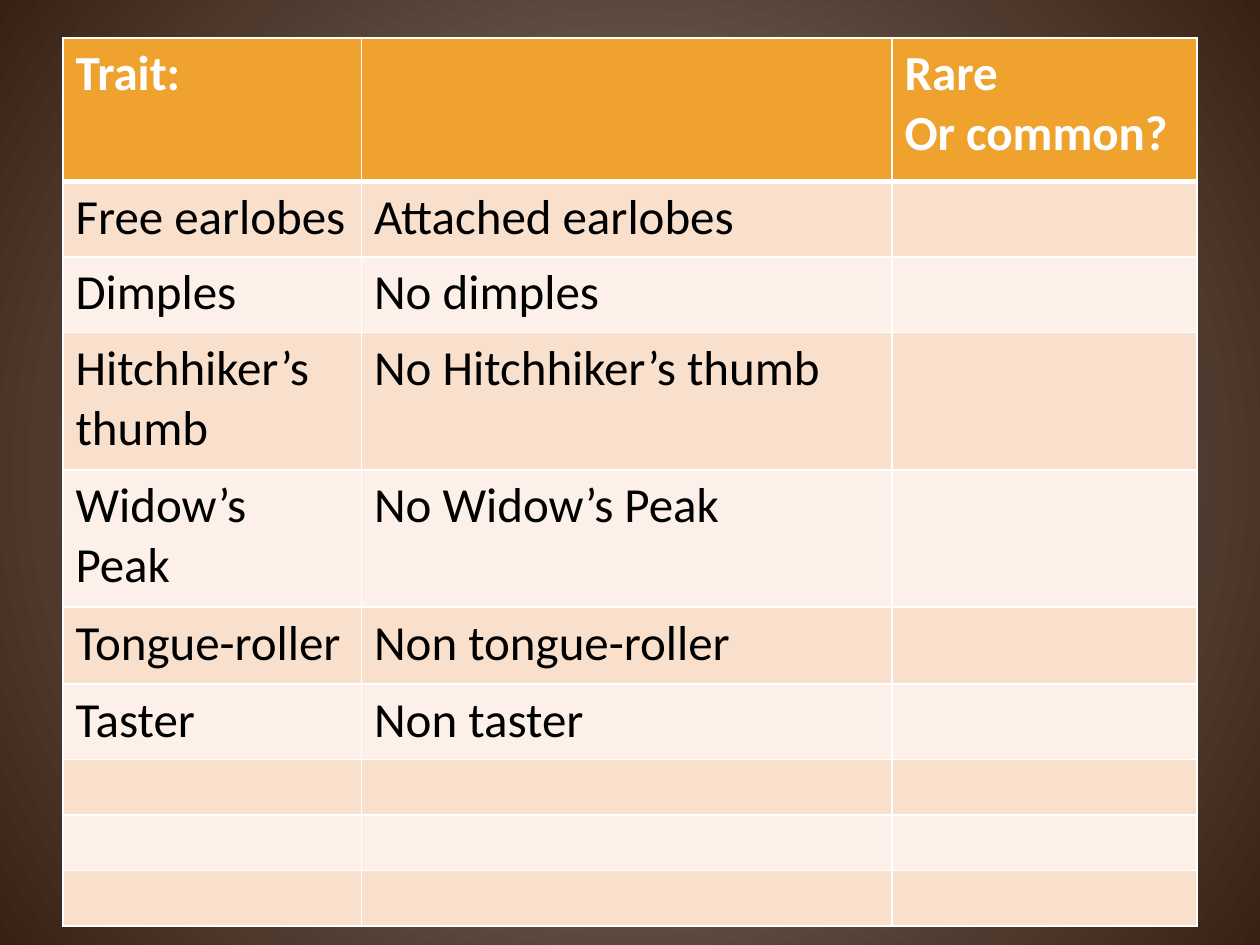
import dataclasses

import lxml.etree
import pptx
import pptx.dml.color
import pptx.oxml.ns
import pptx.util

RGBColor = pptx.dml.color.RGBColor
WHITE = RGBColor(0xFF, 0xFF, 0xFF)
BLACK = RGBColor(0x00, 0x00, 0x00)
ORANGE = RGBColor(0xF0, 0xA2, 0x2E)
PEACH = RGBColor(0xF9, 0xE0, 0xCD)
CREAM = RGBColor(0xFC, 0xF0, 0xE8)
TAUPE = RGBColor(0x95, 0x83, 0x7A)
DARK_BROWN = RGBColor(0x37, 0x21, 0x14)

EMU_PER_PX = 9144  # 100 px to the inch
COLUMN_WIDTHS = (237, 421, 242)
THIN, THICK = 1, 3


@dataclasses.dataclass(frozen=True)
class TraitRow:
    height: int
    texts: tuple[str, str, str] = ("", "", "")


ROWS = (
    TraitRow(114, ("Trait:", "", "Rare\nOr common?")),
    TraitRow(60, ("Free earlobes", "Attached earlobes", "")),
    TraitRow(60, ("Dimples", "No dimples", "")),
    TraitRow(109, ("Hitchhiker’s thumb", "No Hitchhiker’s thumb", "")),
    TraitRow(109, ("Widow’s Peak", "No Widow’s Peak", "")),
    TraitRow(61, ("Tongue-roller", "Non tongue-roller", "")),
    TraitRow(60, ("Taster", "Non taster", "")),
    *[TraitRow(44)] * 3,
)


def px(length: int) -> pptx.util.Emu:
    return pptx.util.Emu(length * EMU_PER_PX)


def add_child(parent, tag: str, **attributes: str):
    return lxml.etree.SubElement(parent, pptx.oxml.ns.qn(tag), **attributes)


def paint_background(slide) -> None:
    """Fill the slide with a gradient that spreads from its centre."""
    fill = slide.background.fill
    fill.gradient()
    for stop, color, position in zip(fill.gradient_stops, (TAUPE, DARK_BROWN), (0, 1)):
        stop.color.rgb = color
        stop.position = position
    gradient = slide.element.find(".//" + pptx.oxml.ns.qn("a:gradFill"))
    gradient.remove(gradient.find(pptx.oxml.ns.qn("a:lin")))
    circle = add_child(gradient, "a:path", path="circle")
    add_child(circle, "a:fillToRect", l="50000", t="50000", r="50000", b="50000")


def add_borders(cell, widths: dict[str, int]) -> None:
    properties = cell._tc.get_or_add_tcPr()
    for side, width in widths.items():
        line = add_child(properties, f"a:ln{side}", w=str(pptx.util.Pt(width)))
        solid = add_child(line, "a:solidFill")
        add_child(solid, "a:srgbClr", val=str(WHITE))


def write_cell(cell, text: str, font_values: dict) -> None:
    cell.text = text
    for para in cell.text_frame.paragraphs:
        for span in para.runs:
            for name, value in font_values.items():
                setattr(span.font, name, value)
            span.font.color.rgb = WHITE if font_values["bold"] else BLACK


def add_trait_table(slide, left: int, top: int) -> None:
    height = sum(row.height for row in ROWS)
    frame = slide.shapes.add_table(
        len(ROWS), len(COLUMN_WIDTHS),
        px(left), px(top), px(sum(COLUMN_WIDTHS)), px(height),
    )
    table = frame.table
    for column, width in zip(table.columns, COLUMN_WIDTHS):
        column.width = px(width)

    for index, row in enumerate(ROWS):
        table.rows[index].height = px(row.height)
        is_header = index == 0
        color = ORANGE if is_header else (PEACH if index % 2 else CREAM)
        # The header and the first trait share a thick line
        borders = {
            "L": THIN,
            "R": THIN,
            "T": THICK if index == 1 else THIN,
            "B": THICK if is_header else THIN,
        }
        font_values = {"name": "Calibri", "size": pptx.util.Pt(28), "bold": is_header}
        for cell, text in zip(table.rows[index].cells, row.texts):
            add_borders(cell, borders)
            cell.fill.solid()
            cell.fill.fore_color.rgb = color
            if text:
                write_cell(cell, text, font_values)


def main() -> None:
    deck = pptx.Presentation()
    deck.slide_width, deck.slide_height = px(1000), px(750)
    page = deck.slides.add_slide(deck.slide_layouts[6])  # blank layout
    paint_background(page)
    add_trait_table(page, left=50, top=30)
    deck.save("out.pptx")


if __name__ == "__main__":
    main()
